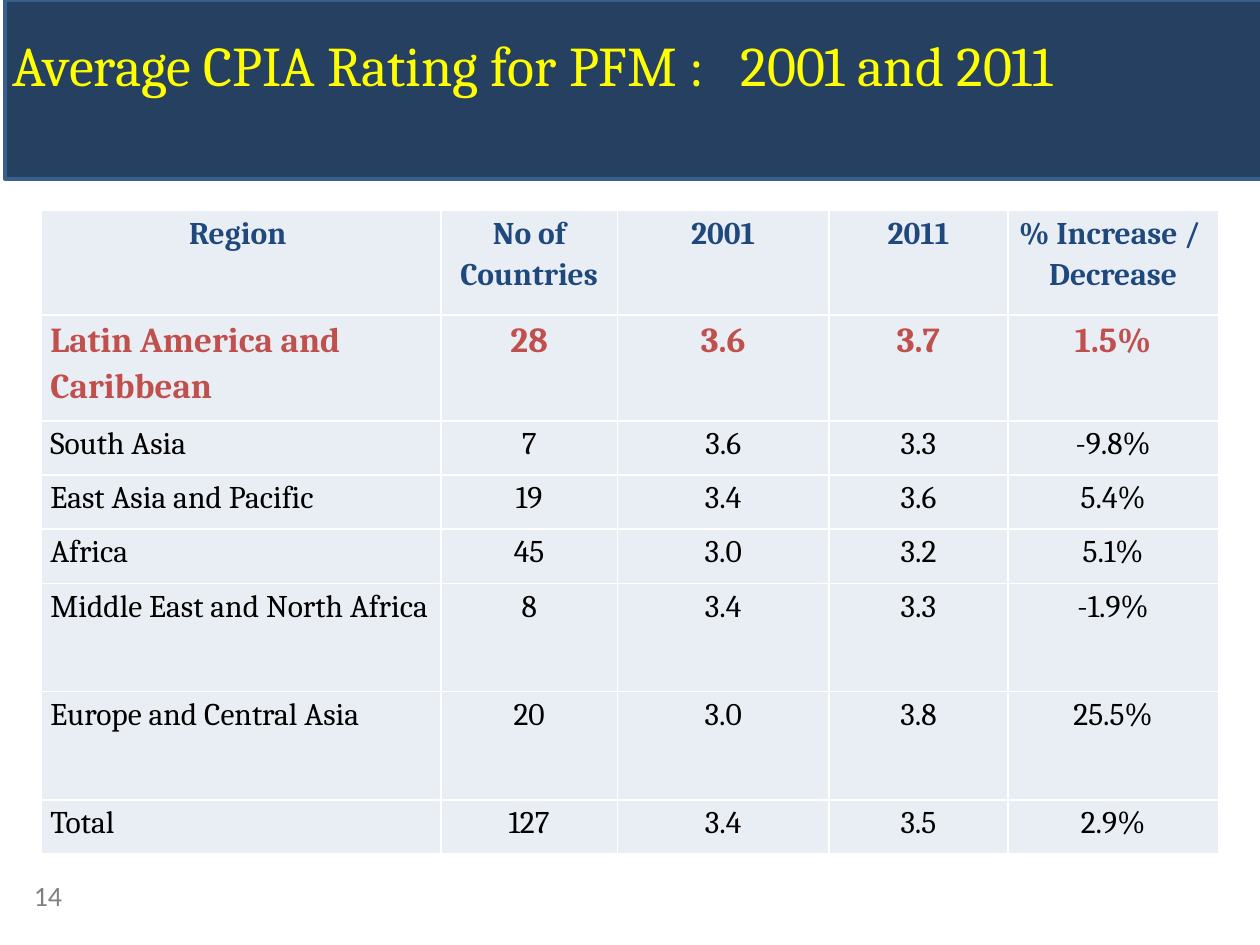
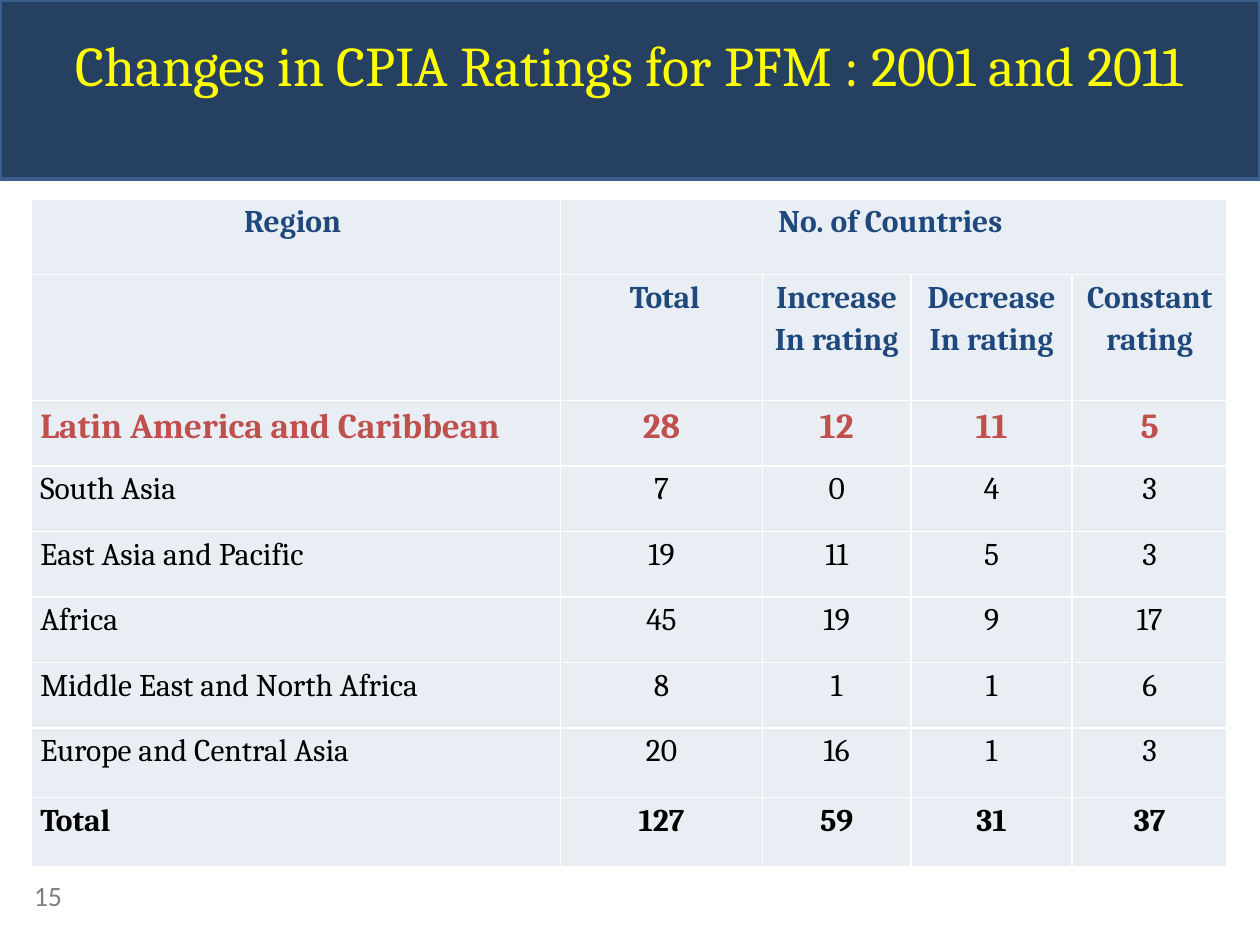
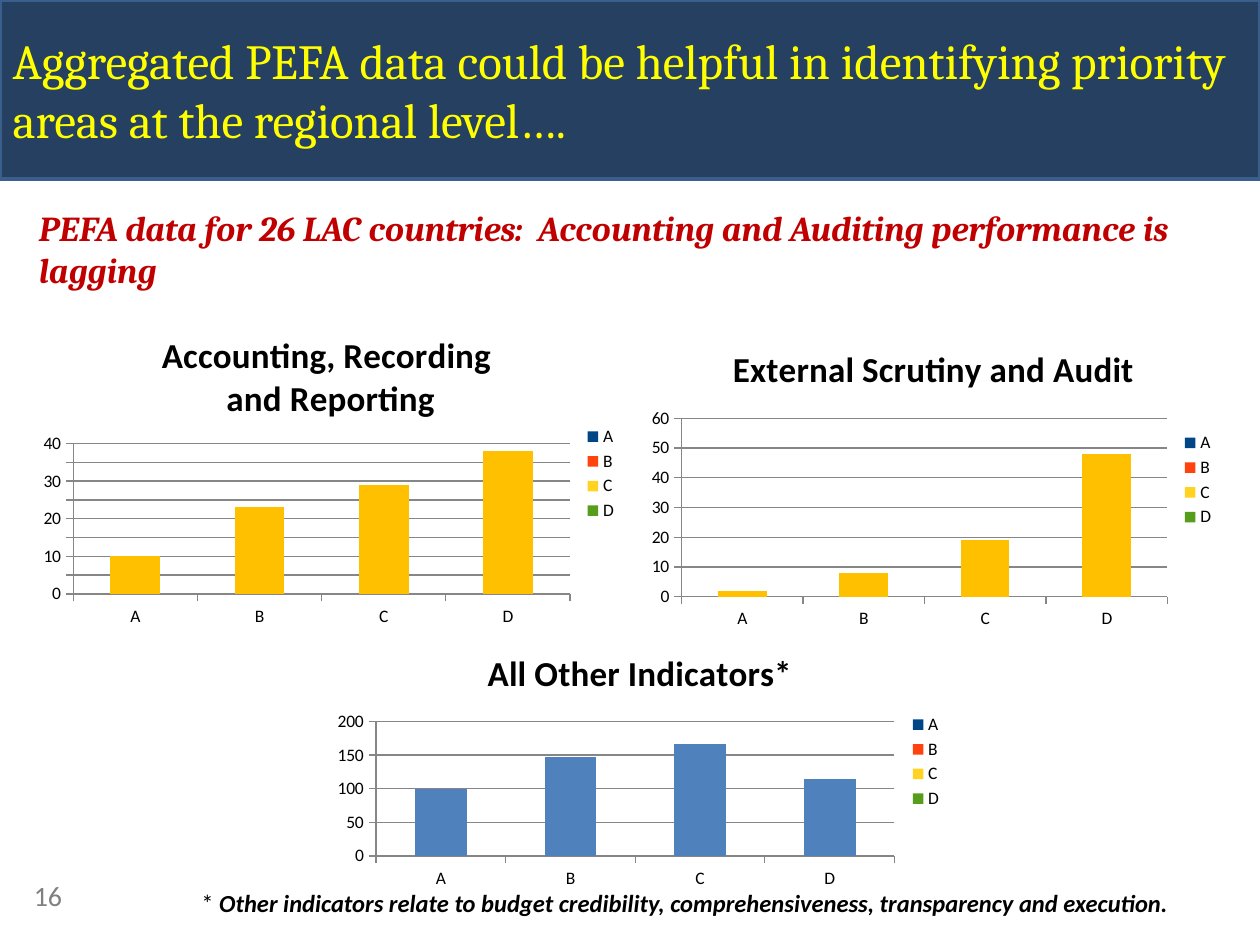
from pptx import Presentation
from pptx.chart.data import CategoryChartData
from pptx.dml.color import RGBColor
from pptx.enum.chart import XL_CHART_TYPE, XL_LEGEND_POSITION, XL_TICK_MARK
from pptx.enum.shapes import MSO_SHAPE
from pptx.enum.text import MSO_ANCHOR, MSO_AUTO_SIZE, PP_ALIGN
from pptx.util import Inches, Pt

LEFT, CENTER = PP_ALIGN.LEFT, PP_ALIGN.CENTER
TOP, BOTTOM = MSO_ANCHOR.TOP, MSO_ANCHOR.BOTTOM
NO_FIT = MSO_AUTO_SIZE.NONE
RECTANGLE = MSO_SHAPE.RECTANGLE
COLUMNS = XL_CHART_TYPE.COLUMN_CLUSTERED
LEGEND_RIGHT = XL_LEGEND_POSITION.RIGHT
TICK_OUT = XL_TICK_MARK.OUTSIDE

COLORS = {
    "band": "254061", "band_line": "3A5F8C", "title": "FFFF00",
    "cell": "E9EDF4", "header": "1F497D", "highlight": "C0504D",
    "text": "000000", "number": "808080", "subtitle": "C00000",
    "axis": "868686", "gold": "FFC000", "blue": "4F81BD",
}
SERIF, SANS = "Cambria", "Calibri"


def rgb(name):
    return RGBColor.from_string(COLORS[name])


def write(p, text, size=18, color="text", font=SERIF, bold=False,
          italic=False, align=LEFT, spacing=None):
    """Add a formatted run to a paragraph."""
    p.alignment = align
    p.line_spacing = spacing
    r = p.add_run()
    r.text = text
    r.font.name, r.font.size = font, Pt(size)
    r.font.bold, r.font.italic = bold, italic
    r.font.color.rgb = rgb(color)


prs = Presentation()
prs.slide_width, prs.slide_height = Inches(10), Inches(7.5)

# Title band, title and page number on every slide
# (page, band left, title height, title size, alignment, title)
pages = [
    (14, 0.04, 0.64, 32, LEFT, "Average CPIA Rating for PFM :   2001 and 2011"),
    (15, 0, 0.64, 32, CENTER, "Changes in CPIA Ratings for PFM : 2001 and 2011"),
    (16, 0, 1.04, 28, LEFT, "Aggregated PEFA data could be helpful in identifying "
                            "priority areas at the regional level…."),
]
for page, band_left, height, size, align, title in pages:
    s = prs.slides.add_slide(prs.slide_layouts[5])

    band = s.shapes.add_shape(RECTANGLE, Inches(band_left), 0, Inches(10), Inches(1.42))
    band.shadow.inherit = False
    band.fill.solid()
    band.fill.fore_color.rgb = rgb("band")
    band.line.color.rgb = rgb("band_line")
    band.line.width = Pt(2)
    s.shapes._spTree.insert(2, band._element)  # behind the title

    sp = s.shapes.title
    sp.left, sp.top, sp.width, sp.height = 0, Inches(0.19), Inches(10), Inches(height)
    tf = sp.text_frame
    tf.word_wrap, tf.auto_size, tf.vertical_anchor = True, NO_FIT, TOP
    write(tf.paragraphs[0], title, size=size, color="title", align=align)

    sp = s.shapes.add_textbox(Inches(0.17), Inches(6.92), Inches(2.33), Inches(0.33))
    tf = sp.text_frame
    tf.word_wrap, tf.vertical_anchor = True, BOTTOM
    tf.margin_bottom = Inches(0.01)
    write(tf.paragraphs[0], str(page), size=16, color="number", font=SANS)

# Tables on the first two slides
ratings = {
    "at": (0.33, 1.67, 9.33, 5.09),
    "cols": [3.17, 1.4, 1.68, 1.42, 1.67],
    "rows": [0.83, 0.84, 0.43, 0.43, 0.43, 0.86, 0.86, 0.43],
    "headers": 1, "bold_total": False,
    "cells": [
        ["Region ", "No of Countries", "2001", "2011", "% Increase /  Decrease"],
        ["Latin America and Caribbean", "28", "3.6", "3.7", "1.5%"],
        ["South Asia", "7", "3.6", "3.3", "-9.8%"],
        ["East Asia and Pacific", "19", "3.4", "3.6", "5.4%"],
        ["Africa", "45", "3.0", "3.2", "5.1%"],
        ["Middle East and North Africa", "8", "3.4", "3.3", "-1.9%"],
        ["Europe and Central Asia", "20", "3.0", "3.8", "25.5%"],
        ["Total", "127", "3.4", "3.5", "2.9%"],
    ],
}
changes = {
    "at": (0.25, 1.58, 9.5, 5.33),
    "cols": [4.2, 1.6, 1.18, 1.28, 1.23],
    "rows": [0.6, 1] + [0.52] * 5 + [0.55] * 2,
    "headers": 2, "bold_total": True,
    "cells": [
        ["Region ", "No. of Countries ", "", "", ""],
        ["", " Total", "Increase\nIn rating", "Decrease\nIn rating", "Constant\nrating"],
        ["Latin America and Caribbean", "28", "12", "11", "5"],
        ["South Asia", "7", "0", "4", "3"],
        ["East Asia and Pacific", "19", "11", "5", "3"],
        ["Africa", "45", "19", "9", "17"],
        ["Middle East and North Africa", "8", "1", "1", "6"],
        ["Europe and Central Asia", "20", "16", "1", "3"],
        ["Total", "127", "59", "31", "37"],
    ],
}
for s, data in zip(prs.slides, (ratings, changes)):
    cells, headers = data["cells"], data["headers"]
    table = s.shapes.add_table(len(cells), len(data["cols"]),
                               *[Inches(v) for v in data["at"]]).table
    table.first_row = table.horz_banding = False
    for col, width in zip(table.columns, data["cols"]):
        col.width = Inches(width)
    for row, height in zip(table.rows, data["rows"]):
        row.height = Inches(height)
    if headers == 2:
        table.cell(0, 1).merge(table.cell(0, 4))

    for i, row in enumerate(cells):
        # Header rows, then the highlighted region, then the others
        if i < headers:
            style = {"color": "header", "bold": True}
        elif i == headers:
            style = {"color": "highlight", "bold": True, "size": 20}
        else:
            style = {"bold": data["bold_total"] and row[0] == "Total"}
        for j, text in enumerate(row):
            cell = table.cell(i, j)
            cell.fill.solid()
            cell.fill.fore_color.rgb = rgb("cell")
            cell.margin_left = cell.margin_right = Inches(0.07)
            cell.margin_top = cell.margin_bottom = 0
            if not text:
                continue
            align = LEFT if j == 0 and i >= headers else CENTER
            tf = cell.text_frame
            for k, line in enumerate(text.split("\n")):
                p = tf.add_paragraph() if k else tf.paragraphs[0]
                write(p, line, align=align, spacing=1.15, **style)

# Subtitle of the third slide
s = prs.slides[2]
sp = s.shapes.add_textbox(Inches(0.21), Inches(1.59), Inches(9.67), Inches(1.08))
sp.text_frame.word_wrap = True
write(sp.text_frame.paragraphs[0],
      "PEFA data for 26 LAC countries:  Accounting and Auditing performance is lagging",
      size=20, color="subtitle", bold=True, italic=True)

# Charts of grade frequencies
charts = [
    ("External Scrutiny and Audit", (5.08, 2.58, 4.66, 2.46), (2, 8, 19, 48), "gold"),
    ("Accounting, Recording \nand Reporting", (0.25, 2.5, 4.75, 2.52),
     (10, 23, 29, 38), "gold"),
    ("All Other Indicators*", (2.58, 5, 5, 2.09), (99, 147, 167, 115), "blue"),
]
for title, at, values, color in charts:
    data = CategoryChartData()
    data.categories = ["A", "B", "C", "D"]
    data.add_series("Frequecncy", values)
    chart = s.shapes.add_chart(COLUMNS, *[Inches(v) for v in at], data).chart
    chart.font.name, chart.font.size = SANS, Pt(10)
    chart.font.color.rgb = rgb("text")

    chart.has_title = True
    tf = chart.chart_title.text_frame
    for k, line in enumerate(title.split("\n")):
        p = tf.add_paragraph() if k else tf.paragraphs[0]
        write(p, line, size=20, font=SANS, bold=True, align=CENTER)
    chart.chart_title.include_in_layout = False

    chart.has_legend = True
    chart.legend.position = LEGEND_RIGHT
    chart.legend.include_in_layout = False

    plot = chart.plots[0]
    plot.gap_width = 150
    plot.vary_by_categories = True  # the legend lists the grades
    fill = plot.series[0].format.fill
    fill.solid()
    fill.fore_color.rgb = rgb(color)

    for axis in (chart.category_axis, chart.value_axis):
        axis.major_tick_mark = TICK_OUT
        axis.format.line.color.rgb = rgb("axis")
    chart.value_axis.has_major_gridlines = True
    chart.value_axis.major_gridlines.format.line.color.rgb = rgb("axis")

# Footnote
sp = s.shapes.add_textbox(Inches(1.5), Inches(7), Inches(8.08), Inches(0.34))
sp.text_frame.word_wrap = True
p = sp.text_frame.paragraphs[0]
write(p, "* ", size=14, font=SANS)
write(p, "Other indicators relate to budget credibility, comprehensiveness, "
         "transparency and execution.", size=14, font=SANS, bold=True, italic=True)

prs.save("out.pptx")
